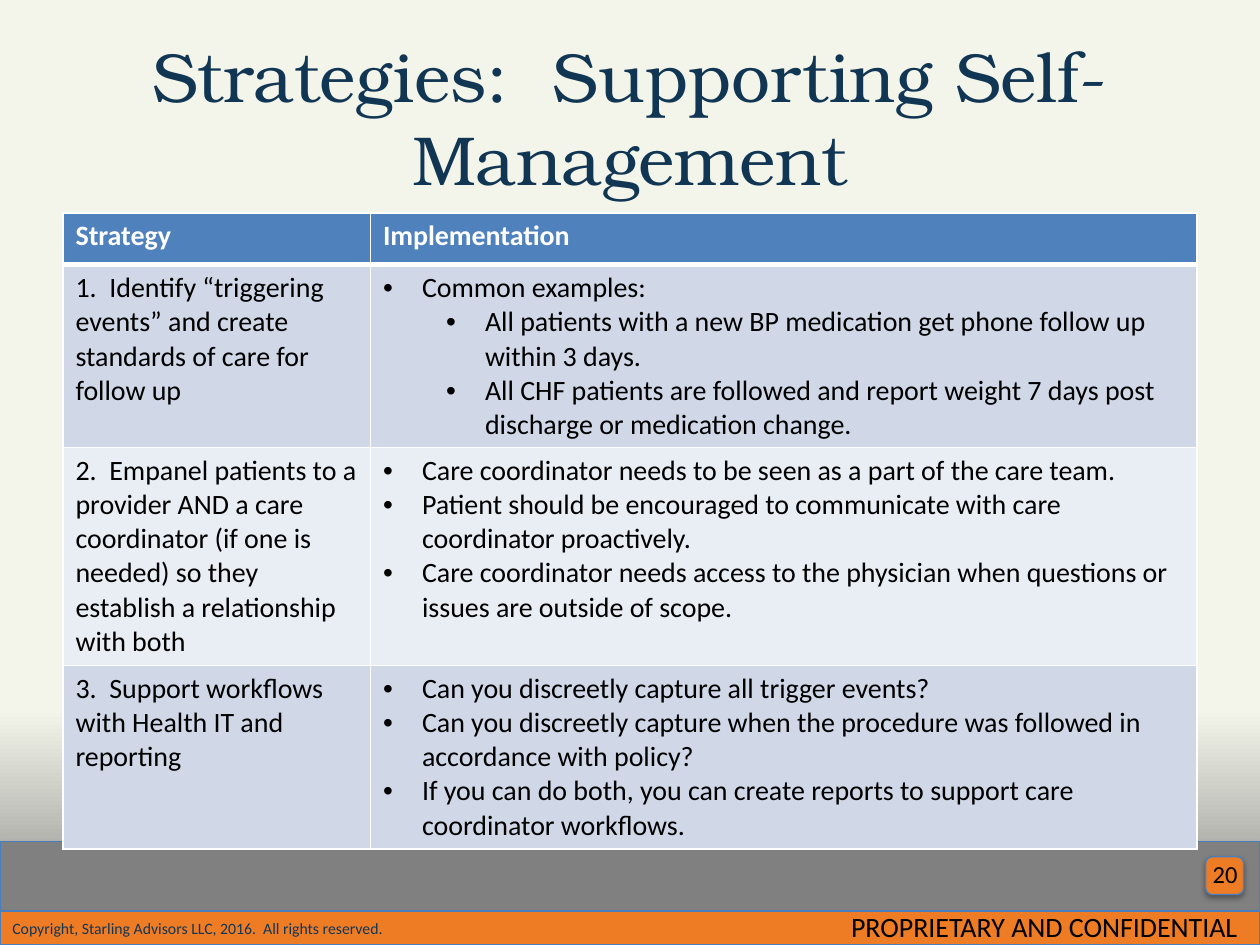
from lxml.etree import SubElement
from pptx import Presentation
from pptx.dml.color import RGBColor
from pptx.enum.shapes import MSO_SHAPE as Shape
from pptx.enum.text import MSO_ANCHOR as Anchor, PP_ALIGN as Align
from pptx.oxml import parse_xml
from pptx.oxml.ns import nsdecls, qn
from pptx.util import Emu, Inches, Pt

# Content
TITLE = "Strategies:  Supporting Self-Management"
HEADINGS = ("Strategy", "Implementation")
# Each strategy with its (level, bullet) list
STRATEGIES = [
    ("1.  Identify “triggering events” and create standards of care for follow up", [
        (0, "Common examples:"),
        (1, "All patients with a new BP medication get phone follow up within 3 days."),
        (1, "All CHF patients are followed and report weight 7 days post discharge "
            "or medication change."),
    ]),
    ("2.  Empanel patients to a provider AND a care coordinator (if one is needed) "
     "so they establish a relationship with both", [
        (0, "Care coordinator needs to be seen as a part of the care team."),
        (0, "Patient should be encouraged to communicate with care coordinator proactively."),
        (0, "Care coordinator needs access to the physician when questions or issues "
            "are outside of scope."),
    ]),
    ("3.  Support workflows with Health IT and reporting", [
        (0, "Can you discreetly capture all trigger events?"),
        (0, "Can you discreetly capture when the procedure was followed in accordance "
            "with policy?"),
        (0, "If you can do both, you can create reports to support care coordinator "
            "workflows."),
    ]),
]
COPYRIGHT = "Copyright, Starling Advisors LLC, 2016.  All rights reserved."
NOTICE = "PROPRIETARY AND CONFIDENTIAL"
PAGE_NUMBER = "20"


class Theme:
    paper, gray, orange, outline = "F4F5EA", "808080", "EE7C25", "4B7EBC"
    header, bands, rule = "4F81BD", ("D0D8E8", "E9EDF4"), "FFFFFF"
    title = dict(name="TeX Gyre Bonum", size=39.6, color="113654")
    heading = dict(name="Calibri", size=16, color="FFFFFF", bold=True)
    body = dict(name="Calibri", size=16, color="000000", bold=False)
    number = dict(name="Calibri", size=14, color="000000")
    copyright = dict(name="Calibri", size=9, color="113654")


# Layout in inches
WIDTH, HEIGHT = 10, 7.5
MARGIN = 0.5
TABLE_TOP = 1.69
COLUMNS = (2.44, 6.56)
ROWS = (0.41, 1.45, 1.73, 1.46)
BAND_TOP, FOOTER_TOP = 6.68, 7.23
HANG, LEVEL_STEP = 0.31, 0.5


def rgb(value):
    return RGBColor.from_string(value)


def format_font(paragraph, style):
    for name, value in style.items():
        if name == "color":
            paragraph.font.color.rgb = rgb(value)
        else:
            setattr(paragraph.font, name, Pt(value) if name == "size" else value)


def write(frame, text, style, align=Align.LEFT, anchor=Anchor.TOP):
    frame.word_wrap = True
    frame.vertical_anchor = anchor
    paragraph = frame.paragraphs[0]
    paragraph.text, paragraph.alignment = text, align
    format_font(paragraph, style)


def add_text(slide, box, *args):
    write(slide.shapes.add_textbox(*map(Inches, box)).text_frame, *args)


def add_panel(slide, kind, box, color):
    shape = slide.shapes.add_shape(kind, *map(Inches, box))
    shape.fill.solid()
    shape.fill.fore_color.rgb = rgb(color)
    shape.line.color.rgb = rgb(Theme.outline)
    shape.line.width = Pt(0.75)
    shape.shadow.inherit = False
    effects = shape.element.spPr.find(qn("a:effectLst"))
    effects.append(parse_xml(
        f'<a:outerShdw {nsdecls("a")} blurRad="{Pt(3.1)}" dist="{Pt(1.8)}" dir="5400000" '
        'rotWithShape="0"><a:srgbClr val="000000"><a:alpha val="35000"/></a:srgbClr>'
        '</a:outerShdw>'))
    return shape


def format_cell(cell, color, bottom_width=1):
    properties = cell._tc.get_or_add_tcPr()
    for side in "LRTB":
        width = Pt(bottom_width if side == "B" else 1)
        border = SubElement(properties, qn(f"a:ln{side}"), w=str(width))
        fill = SubElement(border, qn("a:solidFill"))
        SubElement(fill, qn("a:srgbClr"), val=Theme.rule)
    cell.fill.solid()
    cell.fill.fore_color.rgb = rgb(color)


def write_bullets(frame, bullets):
    for index, (level, text) in enumerate(bullets):
        paragraph = frame.add_paragraph() if index else frame.paragraphs[0]
        paragraph.text, paragraph.level = text, level
        properties = paragraph._p.get_or_add_pPr()
        properties.set("marL", str(Inches(HANG + level * LEVEL_STEP)))
        properties.set("indent", str(-Inches(HANG)))
        SubElement(properties, qn("a:buFont"), typeface="Arial")
        SubElement(properties, qn("a:buChar"), char="•")
        format_font(paragraph, Theme.body)


def add_background(slide):
    fill = slide.background.fill
    fill.gradient()
    fill.gradient_angle = 270
    for stop, position, color in zip(fill.gradient_stops, (0.75, 1), (Theme.paper, Theme.gray)):
        stop.position = position
        stop.color.rgb = rgb(color)


def add_footer(slide):
    add_panel(slide, Shape.RECTANGLE, (0, BAND_TOP, WIDTH, HEIGHT - BAND_TOP), Theme.gray)
    bar = add_panel(slide, Shape.RECTANGLE, (0, FOOTER_TOP, WIDTH, HEIGHT - FOOTER_TOP),
                    Theme.orange)
    write(bar.text_frame, COPYRIGHT, Theme.copyright, Align.LEFT, Anchor.MIDDLE)
    add_panel(slide, Shape.ROUNDED_RECTANGLE, (9.57, 6.8, 0.3, 0.3), Theme.orange)
    add_text(slide, (9.4, 6.77, 0.52, 0.4), PAGE_NUMBER, Theme.number, Align.RIGHT)
    add_text(slide, (5.44, 7.17, 4.48, 0.37), NOTICE, Theme.body, Align.RIGHT)


def add_strategy_table(slide):
    box = (MARGIN, TABLE_TOP, sum(COLUMNS), sum(ROWS))
    table = slide.shapes.add_table(len(ROWS), len(COLUMNS), *map(Inches, box)).table
    for column, width in zip(table.columns, COLUMNS):
        column.width = Inches(width)
    for row, height in zip(table.rows, ROWS):
        row.height = Inches(height)

    for column, heading in enumerate(HEADINGS):
        cell = table.cell(0, column)
        format_cell(cell, Theme.header, bottom_width=3)
        write(cell.text_frame, heading, Theme.heading)
    for index, (strategy, bullets) in enumerate(STRATEGIES):
        name_cell, bullet_cell = table.rows[index + 1].cells
        for cell in (name_cell, bullet_cell):
            format_cell(cell, Theme.bands[index % 2])
            if index == 0:  # the heavy rule under the header is shared
                cell._tc.tcPr.find(qn("a:lnT")).set("w", str(Emu(Pt(3))))
        write(name_cell.text_frame, strategy, Theme.body)
        write_bullets(bullet_cell.text_frame, bullets)


def main():
    presentation = Presentation()
    presentation.slide_width, presentation.slide_height = Inches(WIDTH), Inches(HEIGHT)
    slide = presentation.slides.add_slide(presentation.slide_layouts[6])
    add_background(slide)
    add_footer(slide)
    add_text(slide, (MARGIN, 0.3, WIDTH - 2 * MARGIN, 1.25), TITLE, Theme.title,
             Align.CENTER, Anchor.MIDDLE)
    add_strategy_table(slide)
    presentation.save("out.pptx")


if __name__ == "__main__":
    main()
